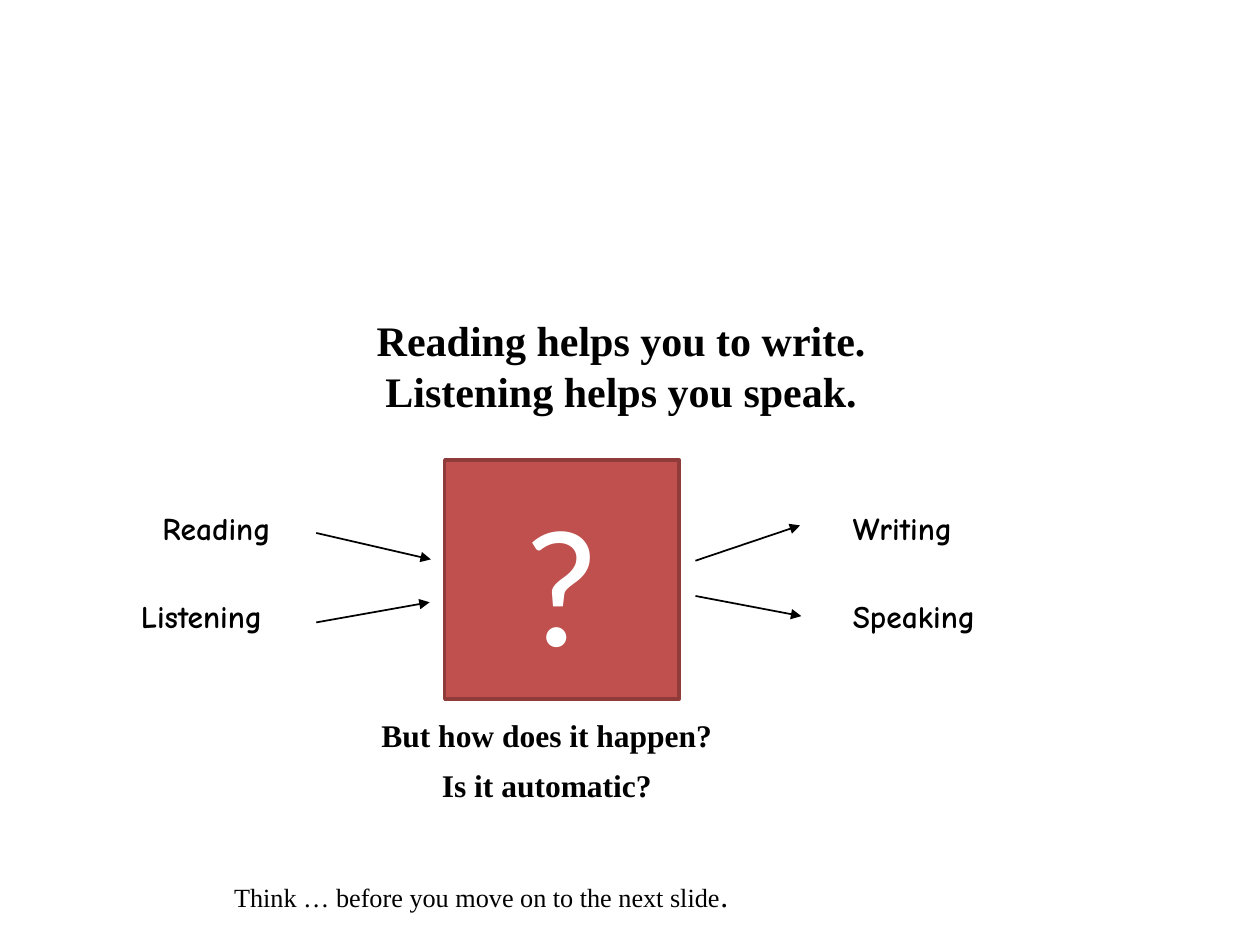
from lxml import etree
from pptx import Presentation
from pptx.dml.color import RGBColor
from pptx.enum import shapes, text
from pptx.oxml import ns
from pptx.util import Inches, Pt

SERIF = "Times New Roman"
CENTER = text.PP_ALIGN.CENTER


def color(value):
    return RGBColor.from_string(value)


def add_text(page, place, lines, size, font, bold=False, align=None, gap=0):
    """Add one paragraph per line, with gap points between paragraphs."""
    box = page.shapes.add_textbox(*map(Inches, place))
    frame = box.text_frame
    frame.word_wrap = True
    frame.text = "\n".join(lines)
    for index, para in enumerate(frame.paragraphs):
        para.alignment = align
        para.font.size = Pt(size)
        para.font.name = font
        para.font.bold = bold
        para.font.color.rgb = color("000000")
        if index:
            para.space_before = Pt(gap)
    return box


deck = Presentation()
deck.slide_width, deck.slide_height = Inches(10), Inches(7.5)
page = deck.slides.add_slide(deck.slide_layouts[6])

# A vertical tab is a line break inside the paragraph
add_text(page, (0.68, 2.45, 8.5, 0.91),
         ["Reading helps you to write.\vListening helps you speak."],
         24, SERIF, bold=True, align=CENTER)

# Skills on either side of the unknown process
skills = [("Reading", 1.29, 4.19), ("Listening", 1.12, 4.89),
          ("Writing", 6.77, 4.19), ("Speaking", 6.77, 4.89)]
for skill, left, middle in skills:
    label = add_text(page, (left - 0.1, middle - 0.2, 1.4, 0.4), [skill],
                     18, "Comic Neue", bold=True)
    label.text_frame.vertical_anchor = text.MSO_ANCHOR.MIDDLE

process = page.shapes.add_shape(
    shapes.MSO_SHAPE.RECTANGLE, *map(Inches, (3.53, 3.65, 1.86, 1.9)))
process.shadow.inherit = False
process.fill.solid()
process.fill.fore_color.rgb = color("C0504D")
process.line.color.rgb = color("8E3B39")
process.line.width = Pt(2)
process.text_frame.text = "?"
process.text_frame.vertical_anchor = text.MSO_ANCHOR.MIDDLE
para = process.text_frame.paragraphs[0]
para.alignment = CENTER
para.font.size = Pt(96)
para.font.name = "Calibri"
para.font.color.rgb = color("FFFFFF")

arrows = [(2.51, 4.23, 3.42, 4.44), (2.51, 4.94, 3.41, 4.78),
          (5.52, 4.45, 6.35, 4.17), (5.52, 4.73, 6.36, 4.89)]
for ends in arrows:
    arrow = page.shapes.add_connector(
        shapes.MSO_CONNECTOR.STRAIGHT, *map(Inches, ends))
    arrow.line.color.rgb = color("000000")
    arrow.line.width = Pt(1)
    etree.SubElement(arrow.line._get_or_add_ln(), ns.qn("a:tailEnd"),
                     type="triangle")
    etree.SubElement(arrow._element.spPr, ns.qn("a:effectLst"))

add_text(page, (0.68, 5.63, 7.32, 0.9),
         ["But how does it happen?", "Is it automatic?"],
         18, SERIF, bold=True, align=CENTER, gap=7)

prompt = add_text(page, (1.76, 6.9, 6, 0.4),
                  ["Think … before you move on to the next slide"], 15, SERIF)
span = prompt.text_frame.paragraphs[0].add_run()
span.text = "."
span.font.size = Pt(18)

deck.save("out.pptx")
